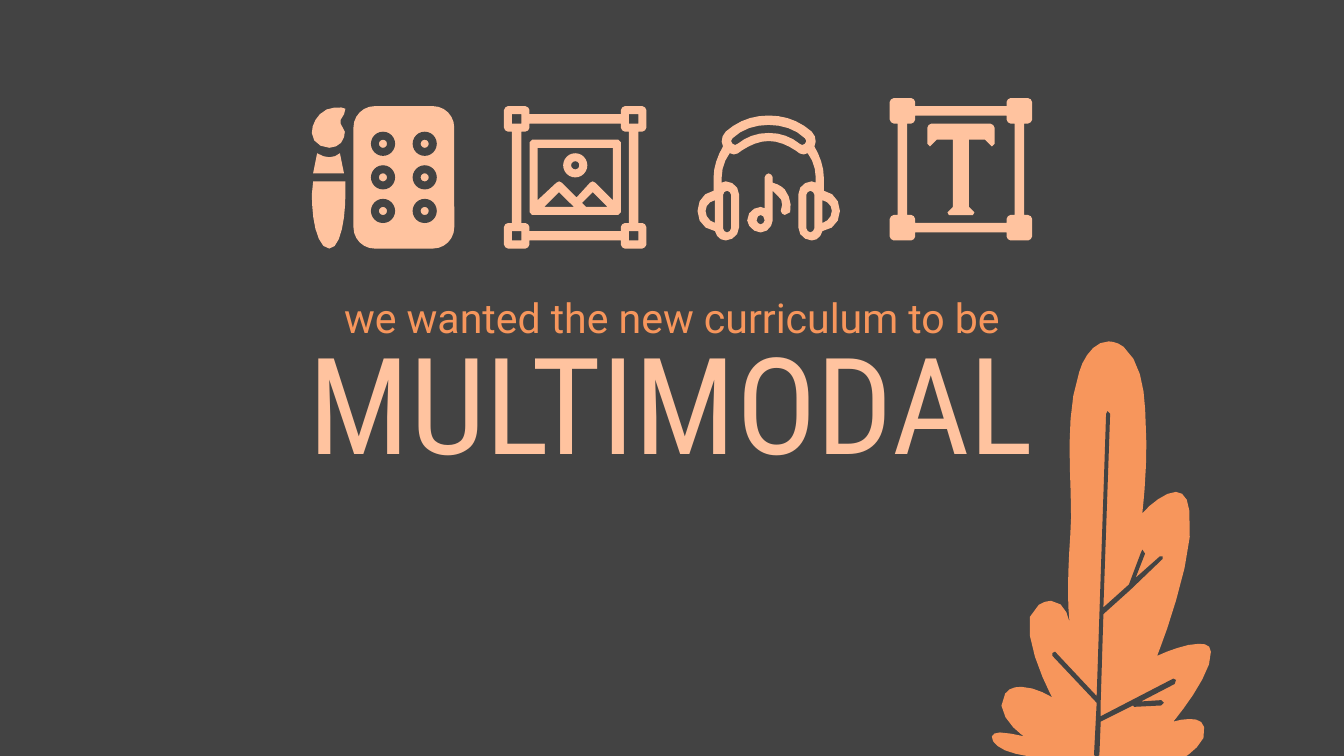
from math import dist

from pptx import Presentation
from pptx.dml.color import RGBColor
from pptx.enum import shapes, text
from pptx.util import Cm, Pt

DARK = RGBColor(0x43, 0x43, 0x43)
ORANGE = RGBColor(0xF7, 0x96, 0x5C)
PEACH = RGBColor(0xFF, 0xC3, 0x9F)
UNITS = 1000

TEXTS = [
    ("we wanted the new curriculum to be", (2.04, 2.18, 5.92, 0.76), 22,
     "Roboto", ORANGE, text.MSO_ANCHOR.TOP),
    ("MULTIMODAL", (1.11, 2.92, 7.77, 0.66), 72,
     "Roboto Condensed", PEACH, text.MSO_ANCHOR.BOTTOM),
]

LEAF = [
    (8.25, 2.54), (8.14, 2.54, 8.06, 2.66, 8.03, 2.77), (7.92, 3.11, 7.97, 3.48, 7.97, 3.85),
    (7.96, 4.11, 7.93, 4.39, 7.96, 4.65), (7.96, 4.64, 7.94, 4.47, 7.82, 4.47),
    (7.79, 4.47, 7.76, 4.48, 7.73, 4.5), (7.52, 4.61, 7.83, 5.19, 7.83, 5.19),
    (7.83, 5.19, 7.71, 5.11, 7.6, 5.11), (7.55, 5.11, 7.51, 5.12, 7.48, 5.16),
    (7.37, 5.31, 7.62, 5.48, 7.62, 5.48), (7.62, 5.48, 7.51, 5.45, 7.44, 5.45),
    (7.41, 5.45, 7.38, 5.46, 7.38, 5.48), (7.38, 5.54, 7.46, 5.6, 7.67, 5.63), (8.82, 5.63),
    (8.82, 5.63, 9, 5.52, 8.96, 5.41), (8.95, 5.36, 8.9, 5.35, 8.85, 5.35),
    (8.79, 5.35, 8.73, 5.37, 8.73, 5.37), (8.73, 5.37, 9.03, 5.01, 9.01, 4.85),
    (9.01, 4.8, 8.97, 4.79, 8.92, 4.79), (8.8, 4.79, 8.61, 4.88, 8.61, 4.88),
    (8.61, 4.88, 8.91, 4.13, 8.85, 3.8), (8.84, 3.7, 8.8, 3.66, 8.75, 3.66),
    (8.67, 3.66, 8.56, 3.75, 8.5, 3.82), (8.52, 3.64, 8.53, 3.46, 8.53, 3.29),
    (8.52, 3.08, 8.54, 2.73, 8.36, 2.58), (8.32, 2.55, 8.28, 2.54, 8.25, 2.54),
]
VEINS = [
    (8.24, 3.06), (8.23, 3.08), (8.16, 5.18), (7.86, 4.86), (7.85, 4.85), (7.83, 4.86),
    (7.83, 4.88), (8.16, 5.23), (8.14, 5.62), (8.16, 5.63), (8.18, 5.62), (8.19, 5.37),
    (8.43, 5.25), (8.44, 5.26), (8.64, 5.25), (8.66, 5.23), (8.64, 5.21), (8.49, 5.22),
    (8.74, 5.09), (8.75, 5.06), (8.73, 5.05), (8.19, 5.33), (8.19, 5.22), (8.21, 4.57),
    (8.41, 4.39), (8.65, 4.16), (8.65, 4.14), (8.63, 4.14), (8.45, 4.3), (8.52, 4.12),
    (8.5, 4.09), (8.49, 4.11), (8.4, 4.35), (8.21, 4.52), (8.26, 3.08),
]

BRUSH = [
    [(2.54, 0.8), (2.48, 0.8, 2.43, 0.8, 2.38, 0.85), (2.34, 0.89, 2.32, 0.94, 2.32, 0.99),
     (2.32, 1.05, 2.38, 1.1, 2.45, 1.1), (2.5, 1.1, 2.55, 1.07, 2.56, 1.02),
     (2.57, 0.99, 2.57, 0.97, 2.55, 0.95), (2.53, 0.92, 2.52, 0.9, 2.56, 0.85),
     (2.57, 0.81), (2.54, 0.8)],
    [(2.36, 1.14), (2.33, 1.29), (2.56, 1.29), (2.53, 1.14),
     (2.51, 1.16, 2.48, 1.17, 2.45, 1.17), (2.42, 1.17, 2.39, 1.16, 2.36, 1.14)],
    [(2.33, 1.35), (2.32, 1.45), (2.32, 1.59, 2.35, 1.85, 2.45, 1.85),
     (2.54, 1.85, 2.57, 1.6, 2.57, 1.45), (2.57, 1.35)],
]
WELLS = [(x, y) for x in (2.85, 3.16) for y in (1.07, 1.32, 1.57)]

PICTURE_BORDER = [(3.94, 1.06), (3.96, 1.04), (4.6, 1.04), (4.62, 1.06),
                  (4.62, 1.58), (4.6, 1.6), (3.96, 1.6), (3.94, 1.58)]
PICTURE_SKY = [(4.56, 1.1), (4.56, 1.49), (4.43, 1.36), (4.41, 1.35), (4.39, 1.36),
               (4.29, 1.47), (4.18, 1.36), (4.16, 1.35), (4.14, 1.36), (4, 1.49), (4, 1.1)]
PICTURE_HILLS = [[(4.16, 1.43), (4.27, 1.54), (4.05, 1.54)],
                 [(4.41, 1.43), (4.52, 1.54), (4.36, 1.54), (4.33, 1.51)]]

HEADPHONE_AXIS = 5.72
HEADPHONE_HALF = [
    (5.72, 0.86), (5.6, 0.86, 5.49, 0.9, 5.4, 0.98), (5.37, 1.01, 5.36, 1.06, 5.38, 1.09),
    (5.34, 1.16, 5.31, 1.24, 5.31, 1.32), (5.31, 1.42), (5.24, 1.43, 5.19, 1.49, 5.19, 1.57),
    (5.19, 1.65, 5.24, 1.71, 5.32, 1.72), (5.33, 1.76, 5.36, 1.79, 5.4, 1.79),
    (5.45, 1.79, 5.5, 1.75, 5.5, 1.69), (5.5, 1.45), (5.5, 1.39, 5.45, 1.35, 5.4, 1.35),
    (5.37, 1.36), (5.37, 1.32), (5.37, 1.26, 5.39, 1.19, 5.43, 1.14), (5.46, 1.15),
    (5.48, 1.15, 5.5, 1.14, 5.52, 1.12), (5.58, 1.08, 5.65, 1.05, 5.72, 1.05),
]
BAND_HALF = [
    (5.72, 0.93), (5.62, 0.93, 5.52, 0.96, 5.45, 1.03), (5.44, 1.05), (5.45, 1.07),
    (5.47, 1.08), (5.49, 1.07), (5.55, 1.02, 5.63, 0.99, 5.72, 0.99),
]
EAR_HOLES = [
    [(5.32, 1.49), (5.32, 1.66), (5.28, 1.65, 5.25, 1.61, 5.25, 1.57),
     (5.25, 1.53, 5.28, 1.5, 5.32, 1.49)],
    [(5.41, 1.42), (5.43, 1.43), (5.44, 1.45), (5.44, 1.7), (5.43, 1.72),
     (5.41, 1.73), (5.39, 1.72), (5.38, 1.7), (5.38, 1.45), (5.39, 1.43)],
]
NOTE = [
    (5.72, 1.29), (5.7, 1.3), (5.69, 1.32), (5.69, 1.55), (5.66, 1.54),
    (5.61, 1.54, 5.56, 1.58, 5.56, 1.64), (5.56, 1.68, 5.61, 1.73, 5.66, 1.73),
    (5.71, 1.73, 5.75, 1.68, 5.75, 1.64), (5.75, 1.42), (5.79, 1.46),
    (5.82, 1.48, 5.83, 1.52, 5.81, 1.57), (5.82, 1.59), (5.84, 1.6), (5.88, 1.58),
    (5.89, 1.52, 5.88, 1.46, 5.84, 1.41), (5.82, 1.39, 5.79, 1.37, 5.75, 1.36),
    (5.75, 1.32), (5.74, 1.3),
]
NOTE_HOLE = [(5.66, 1.6), (5.68, 1.61), (5.69, 1.64), (5.68, 1.66),
             (5.66, 1.67), (5.64, 1.66), (5.63, 1.64), (5.64, 1.61)]
LETTER_AXIS = 7.15
LETTER_HALF = [
    (7.15, 0.92), (6.93, 0.92), (6.91, 0.93), (6.9, 0.95), (6.9, 1.07), (6.92, 1.09),
    (6.97, 1.04), (7.09, 1.04), (7.09, 1.54), (7.05, 1.58), (7.06, 1.6), (7.15, 1.6),
]

FRAME_OUTER = [(0.34, -0.47), (0.34, -0.5), (0.35, -0.52), (0.37, -0.53), (0.5, -0.53),
               (0.52, -0.52), (0.53, -0.5), (0.53, -0.37), (0.52, -0.35), (0.5, -0.34),
               (0.47, -0.34)]
FRAME_INNER = [(0.34, -0.4), (0.34, -0.37), (0.35, -0.35), (0.37, -0.34), (0.4, -0.34)]


def inches(value):
    return Cm(value * 2.54)


def flatten(outline):
    points = []
    for entry in outline:
        if len(entry) == 2:
            points.append(entry)
            continue
        nodes = [points[-1], entry[:2], entry[2:4], entry[4:]]
        steps = min(6, 2 + int(dist(nodes[0], nodes[3]) / 0.1))
        for step in range(1, steps + 1):
            t = step / steps
            weights = ((1 - t) ** 3, 3 * t * (1 - t) ** 2, 3 * t * t * (1 - t), t ** 3)
            points.append(tuple(sum(w * n[axis] for w, n in zip(weights, nodes))
                                for axis in (0, 1)))
    return points


def mirror(points, axis):
    return [(2 * axis - x, y) for x, y in reversed(points)]


def symmetric(half, axis):
    points = flatten(half)
    return points + mirror(points, axis)[1:-1]


def frame(x, y, hollow):
    contours = []
    for points in (FRAME_OUTER, FRAME_INNER):
        contour = []
        for _ in range(4):
            contour += [(x + dx, y + dy) for dx, dy in points]
            points = [(-dy, dx) for dx, dy in points]
        contours.append(contour)
    if hollow:
        for left in (x - 0.47, x + 0.4):
            for top in (y - 0.47, y + 0.4):
                contours.append([(left, top), (left + 0.07, top),
                                 (left + 0.07, top + 0.07), (left, top + 0.07)])
    return contours


def paint(shape, color):
    shape.shadow.inherit = False
    shape.fill.solid()
    shape.fill.fore_color.rgb = color
    shape.line.fill.background()


def draw(group, contours, color=PEACH):
    scaled = [[(x * UNITS, y * UNITS) for x, y in contour] for contour in contours]
    builder = group.shapes.build_freeform(*scaled[0][0], scale=inches(1) / UNITS)
    builder.add_line_segments(scaled[0][1:], close=True)
    for contour in scaled[1:]:
        builder.move_to(*contour[0])
        builder.add_line_segments(contour[1:], close=True)
    paint(builder.convert_to_shape(), color)


def add_preset(group, preset, box, adjustment, color):
    shape = group.shapes.add_shape(preset, *map(inches, box))
    shape.adjustments[0] = adjustment
    paint(shape, color)


def add_ring(group, x, y, color):
    add_preset(group, shapes.MSO_SHAPE.DONUT, (x - 0.09, y - 0.09, 0.18, 0.18), 0.33, color)


def add_text(slide, words, box, size, font, color, anchor):
    text_frame = slide.shapes.add_textbox(*map(inches, box)).text_frame
    text_frame.margin_left = text_frame.margin_right = 0
    text_frame.margin_top = text_frame.margin_bottom = 0
    text_frame.word_wrap = True
    text_frame.vertical_anchor = anchor
    text_frame.text = words
    paragraph = text_frame.paragraphs[0]
    paragraph.alignment = text.PP_ALIGN.CENTER
    run = paragraph.runs[0]
    run.font.size, run.font.name = Pt(size), font
    run.font.color.rgb = color


presentation = Presentation()
presentation.slide_width, presentation.slide_height = inches(10), inches(5.625)
slide = presentation.slides.add_slide(presentation.slide_layouts[6])
slide.background.fill.solid()
slide.background.fill.fore_color.rgb = DARK

leaf = slide.shapes.add_group_shape()
draw(leaf, [flatten(LEAF)], ORANGE)
draw(leaf, [VEINS], DARK)
for entry in TEXTS:
    add_text(slide, *entry)

paints, picture, headphones, letter = (slide.shapes.add_group_shape() for _ in range(4))

add_preset(paints, shapes.MSO_SHAPE.ROUNDED_RECTANGLE, (2.63, 0.79, 0.75, 1.06), 0.21, PEACH)
for x, y in WELLS:
    add_ring(paints, x, y, DARK)
for part in BRUSH:
    draw(paints, [flatten(part)])

draw(picture, frame(4.28, 1.32, True))
draw(picture, [PICTURE_BORDER, PICTURE_SKY, *PICTURE_HILLS])
add_ring(picture, 4.28, 1.23, PEACH)

ear_holes = [flatten(hole) for hole in EAR_HOLES]
draw(headphones, [symmetric(HEADPHONE_HALF, HEADPHONE_AXIS), symmetric(BAND_HALF, HEADPHONE_AXIS),
                  *ear_holes, *(mirror(hole, HEADPHONE_AXIS) for hole in ear_holes)])
draw(headphones, [flatten(NOTE), NOTE_HOLE])

draw(letter, frame(LETTER_AXIS, 1.26, False))
draw(letter, [symmetric(LETTER_HALF, LETTER_AXIS)])

presentation.save("out.pptx")
